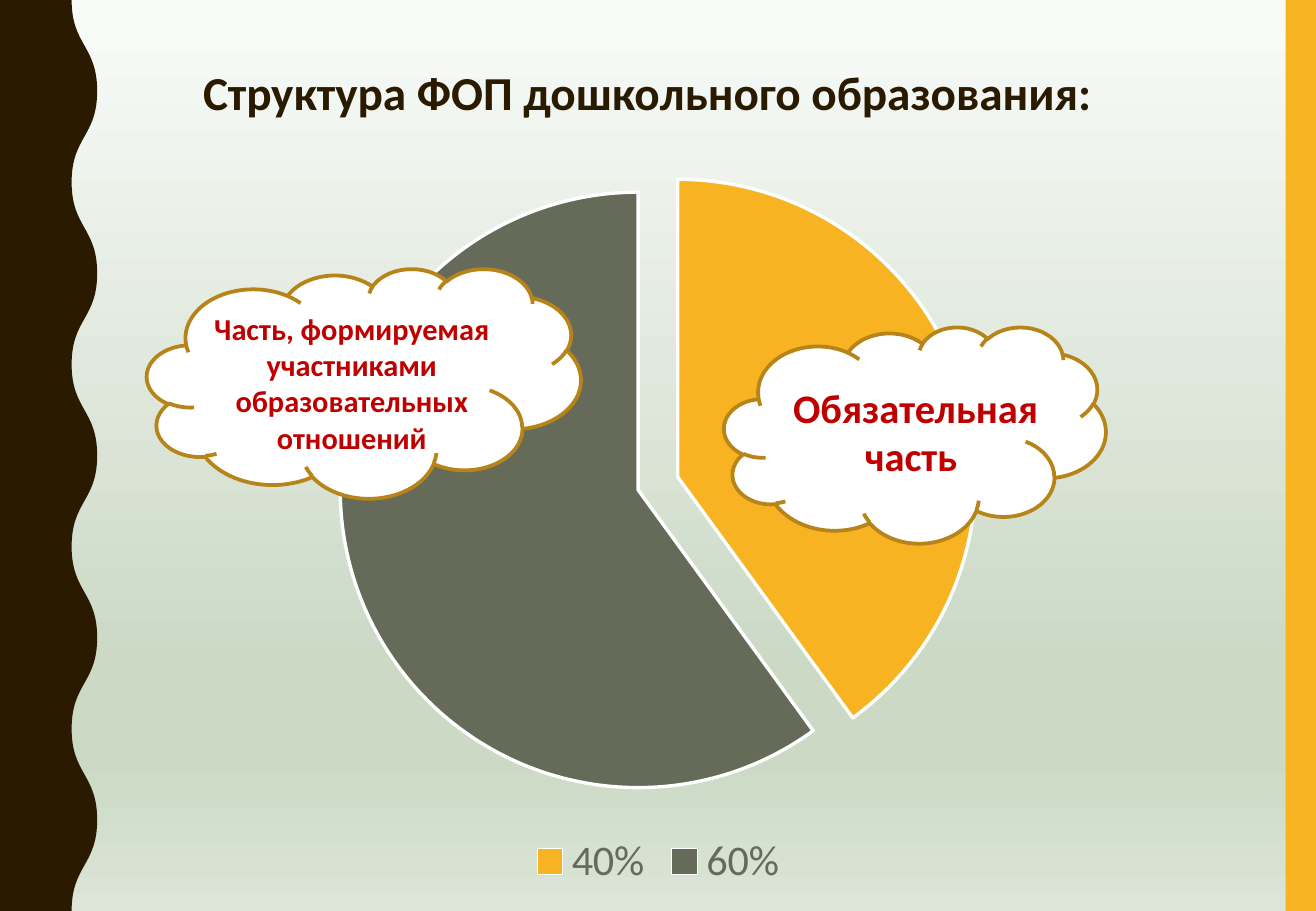
"""Build the slide on the structure of the preschool education programme."""
from dataclasses import dataclass
from itertools import pairwise

from lxml.etree import Element, SubElement
from pptx import Presentation
from pptx.chart.data import CategoryChartData
from pptx.dml.color import RGBColor
from pptx.dml.fill import FillFormat
from pptx.enum.chart import XL_CHART_TYPE as ChartType, XL_LEGEND_POSITION as LegendPosition
from pptx.enum.shapes import MSO_SHAPE as Preset
from pptx.enum.text import MSO_ANCHOR as Anchor, PP_ALIGN as Align
from pptx.oxml.ns import qn
from pptx.shapes.autoshape import Shape
from pptx.slide import Slide
from pptx.text.text import Font, TextFrame
from pptx.util import Inches, Pt

AMBER, OLIVE, BROWN, RED = "F8B323", "656A59", "2A1A00", "C00000"
WHITE, GOLD = "FFFFFF", "B7841A"
Box = tuple[float, float, float, float]


@dataclass(frozen=True)
class Cloud:
    outline: Box
    caption: Box
    text: str
    size: int


CLOUDS = [
    Cloud((1.21, 2.21, 3.57, 1.89), (1.54, 2.5, 2.71, 1.31),
          "Часть, формируемая участниками образовательных отношений", 18),
    Cloud((5.96, 2.69, 3.14, 1.78), (6.18, 3.1, 2.71, 0.91), "Обязательная часть ", 24),
]
SLICES = [(0.4, 40, AMBER), (0.6, 60, OLIVE)]
SKY = [(0, "F9FBF9"), (74, "CBD9C5"), (83, "CBD9C5"), (100, "DCE5D8")]


def paint(fill: FillFormat, color: str) -> None:
    fill.solid()
    fill.fore_color.rgb = RGBColor.from_string(color)


def style(font: Font, size: float, color: str, bold: bool = False) -> None:
    for name, value in {"name": "Calibri", "size": Pt(size), "bold": bold}.items():
        setattr(font, name, value)
    paint(font.fill, color)


def write(frame: TextFrame, text: str, size: float, color: str) -> None:
    for name, value in {"text": text, "word_wrap": True, "vertical_anchor": Anchor.TOP}.items():
        setattr(frame, name, value)
    paragraph = frame.paragraphs[0]
    paragraph.alignment = Align.CENTER
    style(paragraph.runs[0].font, size, color, bold=True)


def finish(shape: Shape, color: str) -> None:
    shape.shadow.inherit = False
    paint(shape.fill, color)
    shape.line.fill.background()


def draw_background(slide: Slide) -> None:
    fill = slide.background.fill
    fill.gradient()
    fill.gradient_angle = 270
    stops = slide._element.find(".//" + qn("a:gsLst"))
    stops.clear()
    for percent, color in SKY:
        stop = SubElement(stops, qn("a:gs"), pos=str(percent * 1000))
        SubElement(stop, qn("a:srgbClr"), val=color)


def draw_wavy_edge(slide: Slide) -> None:
    trough, crest, half_wave, bottom = 590, 800, 750, 7500
    turns = [(crest if index % 2 else trough, index * half_wave) for index in range(11)]
    builder = slide.shapes.build_freeform(*turns[0], scale=Inches(1) / 1000)
    builder.add_line_segments([*turns[1:], (0, bottom), (0, 0)], close=True)
    edge = builder.convert_to_shape()
    finish(edge, BROWN)
    segments = list(edge._element.iter(qn("a:lnTo")))
    for segment, (start, end) in zip(segments, pairwise(turns)):
        middle = str((start[1] + end[1]) // 2)
        curve = Element(qn("a:cubicBezTo"))
        for x, y in ((start[0], middle), (end[0], middle), end):
            SubElement(curve, qn("a:pt"), x=str(x), y=str(y))
        segment.getparent().replace(segment, curve)


def draw_pie(slide: Slide) -> None:
    data = CategoryChartData()
    data.categories = [share for share, _, _ in SLICES]
    data.categories.number_format = "0%"
    data.add_series("Series 1", [value for _, value, _ in SLICES])
    place = map(Inches, (0.73, 1.22, 9.37, 6.15))
    chart = slide.shapes.add_chart(ChartType.PIE, *place, data).chart
    style(chart.font, 10, "000000")
    chart.has_title = False
    chart.has_legend = True
    for name, value in {"position": LegendPosition.BOTTOM, "include_in_layout": False}.items():
        setattr(chart.legend, name, value)
    style(chart.legend.font, 25, OLIVE)
    plot = chart.plots[0]
    plot.vary_by_categories = True
    pie = plot.series[0]
    paint(pie.format.fill, AMBER)
    for index, (_, _, color) in enumerate(SLICES):
        piece = pie.points[index].format
        paint(piece.fill, color)
        paint(piece.line.fill, WHITE)
        piece.line.width = Pt(2)
    explosion = SubElement(pie._element, qn("c:explosion"), val="7")
    pie._element.find(qn("c:spPr")).addnext(explosion)


def draw_cloud(slide: Slide, cloud: Cloud) -> None:
    shape = slide.shapes.add_shape(Preset.CLOUD, *map(Inches, cloud.outline))
    finish(shape, WHITE)
    paint(shape.line.fill, GOLD)
    shape.line.width = Pt(2.25)
    caption = slide.shapes.add_textbox(*map(Inches, cloud.caption))
    write(caption.text_frame, cloud.text, cloud.size, RED)


def main() -> None:
    deck = Presentation()
    deck.slide_width, deck.slide_height = Inches(10.83), Inches(7.5)
    slide = deck.slides.add_slide(deck.slide_layouts[5])
    draw_background(slide)
    stripe = slide.shapes.add_shape(Preset.RECTANGLE, *map(Inches, (10.58, 0, 0.25, 7.5)))
    finish(stripe, AMBER)
    draw_wavy_edge(slide)
    draw_pie(slide)
    heading = slide.shapes.title
    for name, value in {"left": 0, "top": 0.47, "width": 10.65, "height": 0.57}.items():
        setattr(heading, name, Inches(value))
    write(heading.text_frame, "Структура ФОП дошкольного образования:", 28, BROWN)
    for cloud in CLOUDS:
        draw_cloud(slide, cloud)
    deck.save("out.pptx")


if __name__ == "__main__":
    main()
